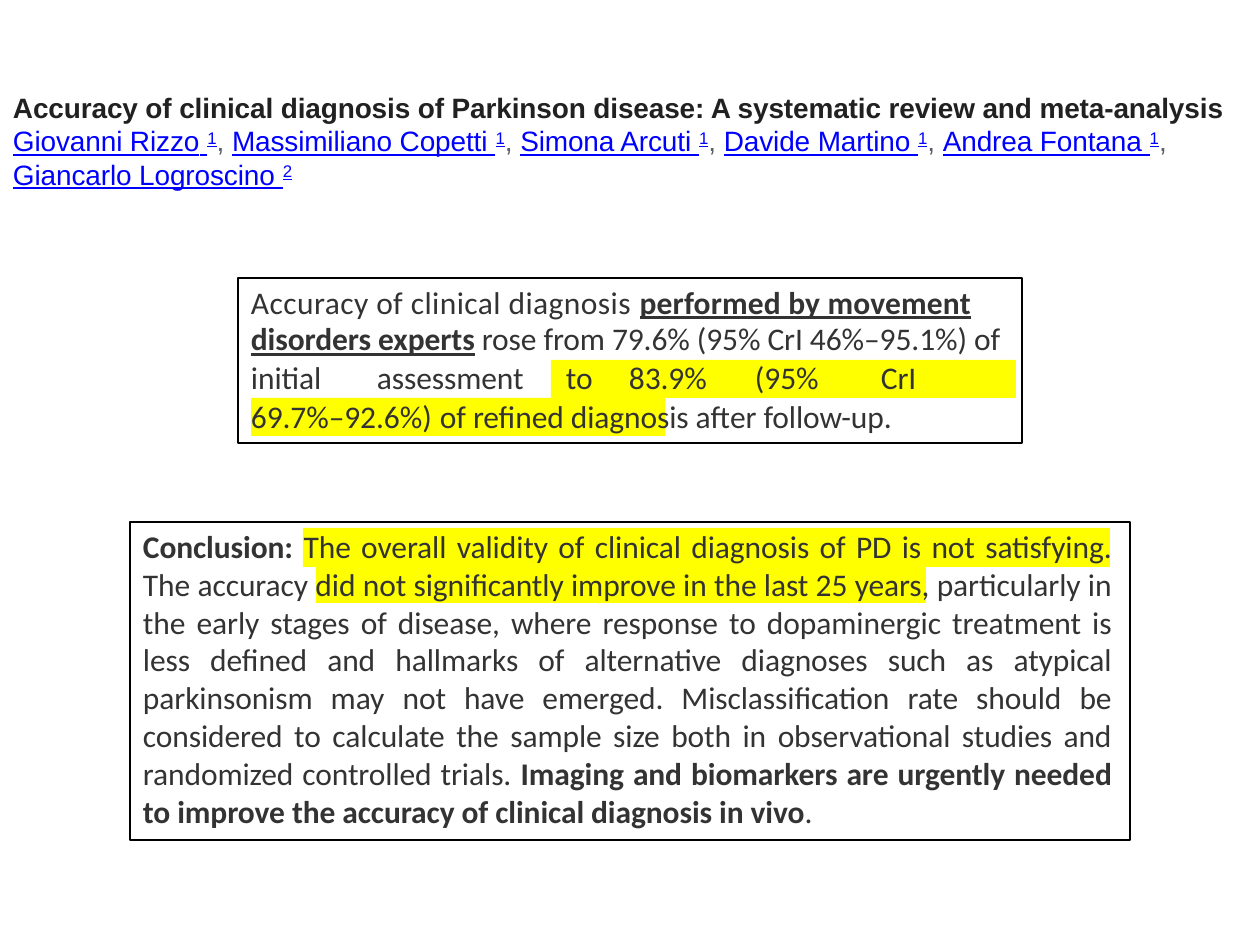
import pptx
import pptx.util
import pptx.dml.color
import pptx.enum.shapes
import pptx.enum.text
import pptx.oxml.ns
from lxml import etree

PX = 914400 // 126
RGBColor = pptx.dml.color.RGBColor
BLACK = RGBColor(0x00, 0x00, 0x00)
YELLOW = RGBColor(0xFF, 0xFF, 0x00)
TITLE = RGBColor(0x21, 0x21, 0x21)
LINK = RGBColor(0x00, 0x00, 0xFF)
GREY = RGBColor(0x5B, 0x61, 0x6B)
BODY = RGBColor(0x33, 0x33, 0x33)
JUSTIFY = pptx.enum.text.PP_ALIGN.JUSTIFY
LEFT = pptx.enum.text.PP_ALIGN.LEFT

AUTHORS = [
    [("Giovanni Rizzo", "1"), ("Massimiliano Copetti", "1"), ("Simona Arcuti", "1"),
     ("Davide Martino", "1"), ("Andrea Fontana", "1")],
    [("Giancarlo Logroscino", "2")],
]
RESULT_TABS = [102, 267, 312, 408, 491, 544, 745]


def px(n):
    return pptx.util.Emu(n * PX)


def add_frame(sp, top):
    tf = sp.text_frame
    tf.word_wrap = True
    tf.vertical_anchor = pptx.enum.text.MSO_ANCHOR.TOP
    tf.margin_left = tf.margin_right = tf.margin_bottom = 0
    tf.margin_top = px(top)
    return tf


def add_box(s, left, top, width, height, inset):
    """Outlined, unfilled rectangle that holds text."""
    sp = s.shapes.add_shape(pptx.enum.shapes.MSO_SHAPE.RECTANGLE,
                            px(left), px(top), px(width), px(height))
    sp.shadow.inherit = False
    sp.fill.background()
    sp.line.color.rgb = BLACK
    sp.line.width = pptx.util.Pt(0.75)
    return add_frame(sp, inset)


def add_highlight(s, points):
    builder = s.shapes.build_freeform(*points[0], scale=PX)
    builder.add_line_segments(points[1:], close=True)
    sp = builder.convert_to_shape()
    sp.shadow.inherit = False
    sp.fill.solid()
    sp.fill.fore_color.rgb = YELLOW
    sp.line.fill.background()


def add_paragraph(tf, indent, spacing, before=0, align=LEFT, right=0, tabs=()):
    p = tf.paragraphs[0]
    if p.runs:
        p = tf.add_paragraph()
    p.alignment = align
    p.line_spacing = spacing
    p.space_before = pptx.util.Pt(before)
    ppr = p._p.get_or_add_pPr()
    ppr.set("marL", str(px(indent)))
    ppr.set("marR", str(px(right)))
    ppr.set("indent", "0")
    if tabs:
        tab_list = etree.SubElement(ppr, pptx.oxml.ns.qn("a:tabLst"))
        for pos in tabs:
            etree.SubElement(tab_list, pptx.oxml.ns.qn("a:tab"),
                             pos=str(px(pos)), algn="l")
    return p


def add_run(p, text, font, size, color, bold=False, underline=False, spc=-5, base=0):
    r = p.add_run()
    r.text = text
    r.font.name = font
    r.font.size = pptx.util.Pt(size)
    r.font.color.rgb = color
    r.font.bold = bold
    r.font.underline = underline
    rpr = r._r.get_or_add_rPr()
    rpr.set("spc", str(spc))
    if base:
        rpr.set("baseline", str(base))


def add_body(p, text, **style):
    add_run(p, text, "Calibri", 18, BODY, **style)


def add_citation(s):
    sp = s.shapes.add_textbox(px(8), px(90), px(1234), px(103))
    tf = add_frame(sp, 1)
    p = add_paragraph(tf, 5, pptx.util.Pt(19.1), before=1)
    add_run(p, "Accuracy of clinical diagnosis of Parkinson disease: "
               "A systematic review and meta-analysis", "Arial", 16, TITLE, bold=True)
    for line in AUTHORS:
        p = add_paragraph(tf, 5, pptx.util.Pt(19))
        for i, (name, mark) in enumerate(line):
            add_run(p, name, "Arial", 16, LINK, underline=True)
            add_run(p, " ", "Arial", 16, LINK, underline=True, spc=-150)
            add_run(p, mark, "Arial", 16.5, LINK, underline=True, base=25000)
            if len(line) > 1:
                comma = ", " if i < len(line) - 1 else ","
                add_run(p, comma, "Arial", 16, GREY)


def add_result(s):
    tf = add_box(s, 238, 278, 784, 165, 6)
    p = add_paragraph(tf, 13, pptx.util.Pt(20.9), before=3.9)
    add_body(p, "Accuracy of clinical diagnosis ", spc=25)
    add_body(p, "performed by movement ", bold=True, underline=True, spc=10)
    add_body(p, "disorders experts", bold=True, underline=True)
    add_body(p, " rose from 79.6% (95% CrI 46%–95.1%) of")
    p = add_paragraph(tf, 13, pptx.util.Pt(22.1), before=0.2, right=12, tabs=RESULT_TABS)
    add_body(p, "initial\tassessment\tto\t83.9%\t(95%\tCrI\t69.7%–92.6%)\t"
                "of refined diagnosis after follow-up.")


def add_conclusion(s):
    tf = add_box(s, 130, 522, 1000, 318, 5)
    p = add_paragraph(tf, 13, 1.0, before=2.6, align=JUSTIFY, right=18)
    add_body(p, "Conclusion: ", bold=True)
    add_body(p, "The overall validity of clinical diagnosis of PD is not satisfying. "
                "The accuracy did not significantly improve in the last 25 years, "
                "particularly in the early stages of disease, where response to "
                "dopaminergic treatment is less defined and hallmarks of alternative "
                "diagnoses such as atypical parkinsonism may not have emerged. "
                "Misclassification rate should be considered to calculate the sample "
                "size both in observational studies and randomized controlled trials. ")
    add_body(p, "Imaging and biomarkers are urgently needed to improve the accuracy "
                "of clinical diagnosis in vivo", bold=True)
    add_body(p, ".")


def main():
    prs = pptx.Presentation()
    prs.slide_width = pptx.util.Inches(10)
    prs.slide_height = pptx.util.Inches(7.5)
    s = prs.slides.add_slide(prs.slide_layouts[6])

    # Title and authors
    add_citation(s)

    # Conclusion over its highlight
    add_highlight(s, [(1110, 528), (303, 528), (303, 567), (316, 567), (316, 603),
                      (926, 603), (926, 567), (1110, 567)])
    add_conclusion(s)

    # Expert accuracy over its highlight
    add_highlight(s, [(1016, 360), (551, 360), (551, 398), (251, 398), (251, 436),
                      (665, 436), (665, 398), (1016, 398)])
    add_result(s)

    prs.save("out.pptx")


if __name__ == "__main__":
    main()
